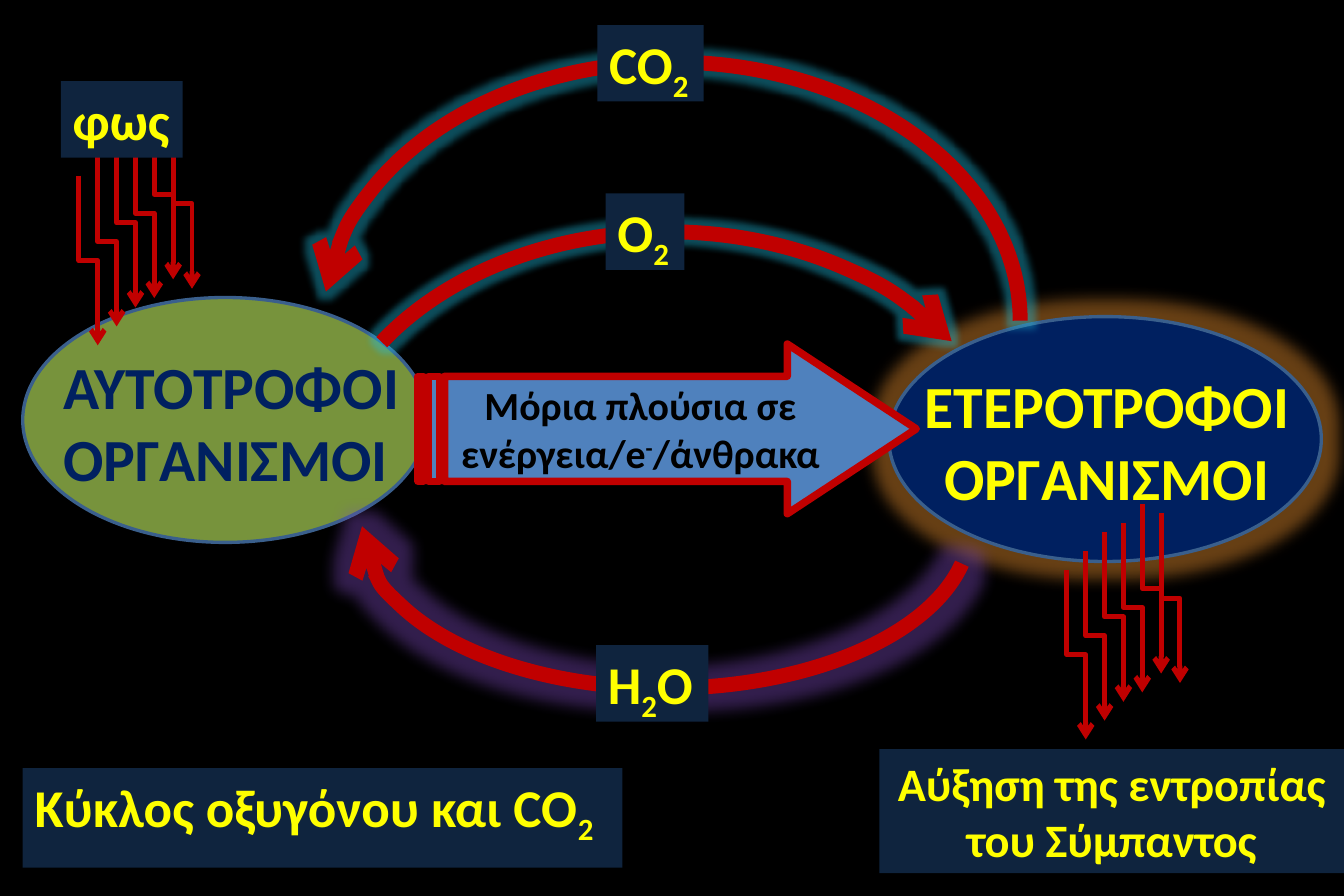
from lxml import etree
from pptx import Presentation
from pptx.dml.color import RGBColor
from pptx.enum.shapes import MSO_CONNECTOR, MSO_SHAPE
from pptx.enum.text import MSO_ANCHOR, MSO_AUTO_SIZE, PP_ALIGN
from pptx.oxml.ns import qn
from pptx.util import Inches, Pt

ELBOW = MSO_CONNECTOR.ELBOW
ARC, ELLIPSE = MSO_SHAPE.ARC, MSO_SHAPE.OVAL
STRIPED_ARROW = MSO_SHAPE.STRIPED_RIGHT_ARROW
LEFT, CENTER = PP_ALIGN.LEFT, PP_ALIGN.CENTER
TOP, MIDDLE = MSO_ANCHOR.TOP, MSO_ANCHOR.MIDDLE
GROW = MSO_AUTO_SIZE.SHAPE_TO_FIT_TEXT
TITLE_ONLY = 5

COLORS = {
    "background": "000000",
    "label": "0F243E",
    "yellow": "FFFF00",
    "navy": "002060",
    "green": "77933C",
    "outline": "3A5F8C",
    "blue": "4F81BD",
    "black": "000000",
    "red": "C00000",
    "cyan_glow": "20BEE1",
    "purple_glow": "7F4BC0",
    "orange_glow": "FF9E33",
}
SUBSCRIPT, SUPERSCRIPT = -25, 30
RAY_LENGTH = 1.42
RAY_STEP = RAY_LENGTH / 9
RAY_RISES = (0, 1, 2, 2.5, 3.5, 3)


def rgb(name):
    """Return the named colour."""
    return RGBColor.from_string(COLORS[name])


def box(left, top, width, height):
    """Return a position and size as lengths."""
    return [Inches(value) for value in (left, top, width, height)]


def set_line(line, color, width):
    """Give a line its colour and width in points."""
    line.color.rgb = rgb(color)
    line.width = Pt(width)


def add_arrowhead(line_shape, end):
    """Put an open arrowhead at headEnd or tailEnd."""
    line = line_shape.line._get_or_add_ln()
    etree.SubElement(line, qn(f"a:{end}"), type="arrow")


def add_glow(shape, color, radius):
    """Surround a shape with a translucent glow."""
    effects = shape._element.spPr.find(qn("a:effectLst"))
    glow = etree.SubElement(effects, qn("a:glow"), rad=str(Pt(radius)))
    tint = etree.SubElement(glow, qn("a:srgbClr"), val=COLORS[color])
    etree.SubElement(tint, qn("a:alpha"), val="40000")


def write_text(shape, parts, size, color, align=LEFT, anchor=TOP, wrap=True):
    """Write bold text from (text, baseline percent) parts."""
    frame = shape.text_frame
    frame.word_wrap = wrap
    frame.vertical_anchor = anchor
    paragraph = frame.paragraphs[0]
    paragraph.alignment = align
    font = paragraph.font
    font.name, font.size, font.bold = "Calibri", Pt(size), True
    font.color.rgb = rgb(color)
    for text, baseline in parts:
        run = paragraph.add_run()
        run.text = text
        if baseline:
            run._r.get_or_add_rPr().set("baseline", str(baseline * 1000))


def format_label(shape, parts, size=32, align=LEFT, wrap=False):
    """Make a shape a dark label with yellow text."""
    shape.fill.solid()
    shape.fill.fore_color.rgb = rgb("label")
    write_text(shape, parts, size, "yellow", align, wrap=wrap)
    shape.text_frame.auto_size = GROW


def add_label(slide, place, parts, **options):
    """Add a dark label."""
    format_label(slide.shapes.add_textbox(*box(*place)), parts, **options)


def add_shape(shapes, kind, place, fill, line_color, line_width):
    """Add a filled and outlined preset shape without shadow."""
    shape = shapes.add_shape(kind, *box(*place))
    shape.shadow.inherit = False
    shape.fill.solid()
    shape.fill.fore_color.rgb = rgb(fill)
    set_line(shape.line, line_color, line_width)
    return shape


def add_organisms(shapes, place, fill, text_place, text, color, align):
    """Add an ellipse with its text box and return the ellipse."""
    ellipse = add_shape(shapes, ELLIPSE, place, fill, "outline", 2)
    text_box = shapes.add_textbox(*box(*text_place))
    write_text(text_box, [(text, 0)], 36, color, align)
    text_box.text_frame.auto_size = GROW
    return ellipse


def add_cycle_arc(slide, place, angles, end, glow, radius, rotation=0):
    """Add a glowing arc arrow between two angles in degrees."""
    arc = slide.shapes.add_shape(ARC, *box(*place))
    arc.rotation = rotation
    for index, angle in enumerate(angles):
        arc.adjustments[index] = angle * 0.6
    arc.shadow.inherit = False
    arc.fill.background()
    set_line(arc.line, "red", 9)
    add_arrowhead(arc, end)
    add_glow(arc, glow, radius)


def add_rays(slide, left, top):
    """Add a row of bent arrows that run downwards."""
    shift = (RAY_LENGTH - RAY_STEP) / 2
    for index, rise in enumerate(RAY_RISES):
        x = left + index * RAY_STEP - shift
        y = top - rise * RAY_STEP + shift
        ends = box(x + RAY_LENGTH, y, x, y + RAY_STEP)
        ray = slide.shapes.add_connector(ELBOW, *ends)
        properties = ray._element.spPr
        properties.xfrm.set("rot", str(270 * 60000))
        set_line(ray.line, "red", 3)
        add_arrowhead(ray, "tailEnd")
        etree.SubElement(properties, qn("a:effectLst"))


def add_title(slide):
    """Place and format the slide title."""
    title = slide.shapes.title
    title.left, title.top, title.width, title.height = box(0.19, 6.43, 5.02, 0.64)
    format_label(title, [("Κύκλος οξυγόνου και CO", 0), ("2", SUBSCRIPT)])


def add_molecule_arrow(slide):
    """Add the striped arrow between the two kinds of organisms."""
    arrow = add_shape(slide.shapes, STRIPED_ARROW, (3.5, 2.88, 4.17, 1.42),
                      "blue", "red", 4.5)
    arrow.adjustments[0], arrow.adjustments[1] = 0.62, 0.76
    parts = [("Μόρια πλούσια σε ενέργεια/e", 0), ("-", SUPERSCRIPT), ("/άνθρακα", 0)]
    write_text(arrow, parts, 24, "black", CENTER, MIDDLE)


def main():
    """Build the oxygen and carbon dioxide cycle slide."""
    presentation = Presentation()
    presentation.slide_width, presentation.slide_height = Inches(11.25), Inches(7.5)
    slide = presentation.slides.add_slide(presentation.slide_layouts[TITLE_ONLY])
    slide.background.fill.solid()
    slide.background.fill.fore_color.rgb = rgb("background")
    add_title(slide)

    autotrophs = slide.shapes.add_group_shape()
    add_organisms(autotrophs.shapes, (0.19, 2.49, 3.39, 2.05), "green",
                  (0.43, 2.88, 3.07, 1.31), "ΑΥΤΟΤΡΟΦΟΙ ΟΡΓΑΝΙΣΜΟΙ", "navy", LEFT)
    heterotrophs = add_organisms(
        slide.shapes, (7.44, 2.65, 3.62, 2.05), "navy",
        (7.62, 3.04, 3.29, 1.31), "ΕΤΕΡΟΤΡΟΦΟΙ ΟΡΓΑΝΙΣΜΟΙ", "yellow", CENTER)
    add_glow(heterotrophs, "orange_glow", 18)

    add_cycle_arc(slide, (2.71, 0.52, 5.83, 4.33), (184.81, 0), "headEnd",
                  "cyan_glow", 8)
    add_label(slide, (5, 0.21, 0.89, 0.64), [("CO", 0), ("2", SUBSCRIPT)])
    add_molecule_arrow(slide)
    add_rays(slide, 0.66, 1.47)
    add_label(slide, (0.51, 0.68, 1.02, 0.64), [("φως", 0)])
    add_rays(slide, 8.93, 4.77)
    add_label(slide, (7.36, 6.27, 3.89, 1.04),
              [("Αύξηση της εντροπίας του Σύμπαντος", 0)],
              size=28, align=CENTER, wrap=True)
    add_cycle_arc(slide, (3.03, 3.05, 5.09, 2.71), (187.2, 0), "tailEnd",
                  "purple_glow", 18, rotation=180)
    add_label(slide, (4.99, 5.4, 0.94, 0.64),
              [("Η", 0), ("2", SUBSCRIPT), ("O", 0)])
    add_cycle_arc(slide, (2.67, 1.94, 5.83, 4.33), (207.45, 332.33), "tailEnd",
                  "cyan_glow", 8)
    add_label(slide, (5.07, 1.62, 0.66, 0.64), [("O", 0), ("2", SUBSCRIPT)])
    presentation.save("out.pptx")


if __name__ == "__main__":
    main()
